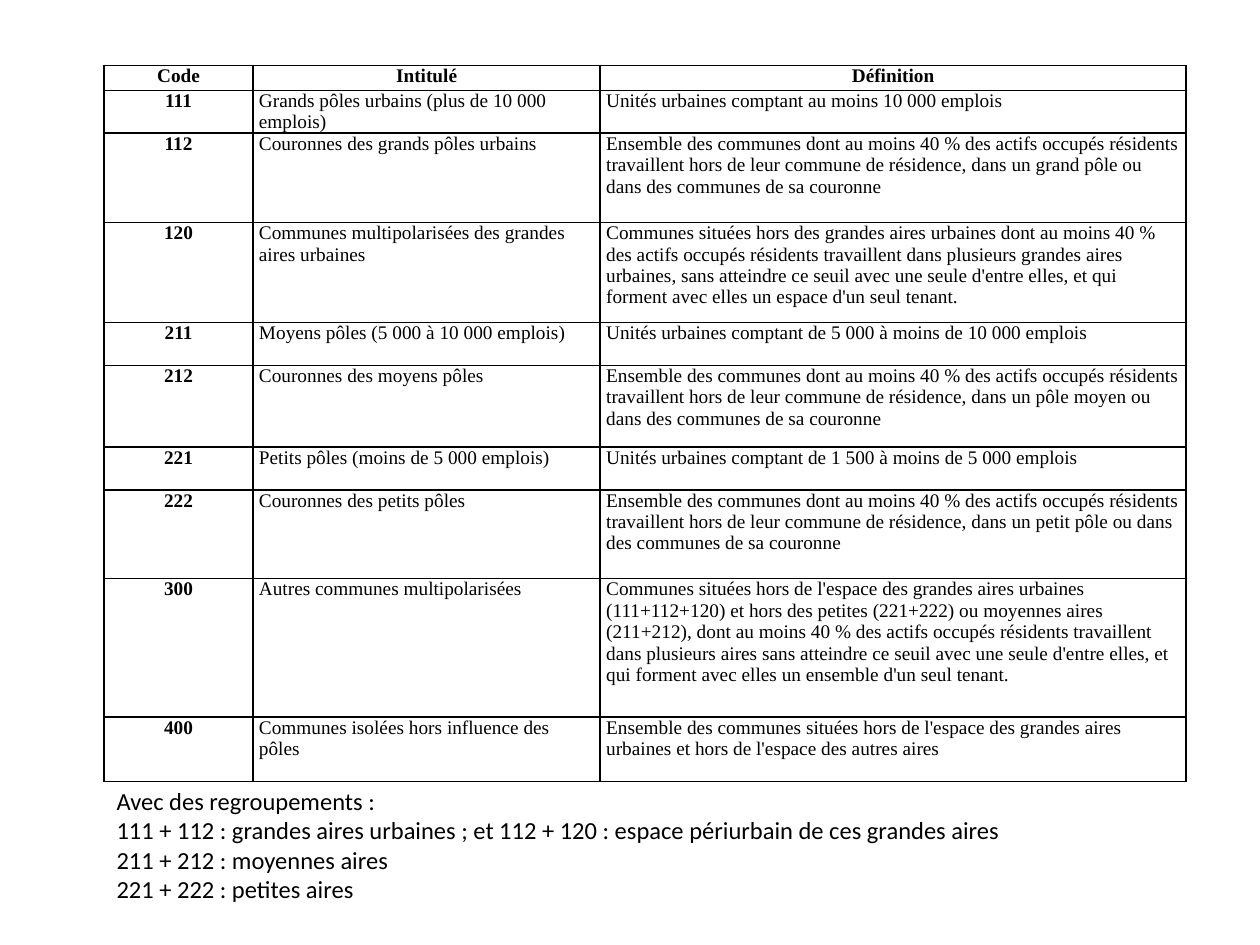
import pptx
import pptx.util
import pptx.dml.color
import pptx.enum.text
import pptx.oxml
import lxml.etree

Cm = pptx.util.Cm
ALIGN = pptx.enum.text.PP_ALIGN

COLORS = {"text": "000000", "border": "000000"}
FONTS = {"table": "Times New Roman", "notes": "Calibri"}

HEADERS = ("Code", "Intitulé", "Définition")
COLUMN_WIDTHS = (3.0, 7.0, 11.81)
HEADER_HEIGHT = 0.5
CATEGORIES = [
    (0.86, "111", "Grands pôles urbains (plus de 10 000 emplois)",
     "Unités urbaines comptant au moins 10 000 emplois"),
    (1.8, "112", "Couronnes des grands pôles urbains",
     "Ensemble des communes dont au moins 40 % des actifs occupés résidents travaillent "
     "hors de leur commune de résidence, dans un grand pôle ou dans des communes de sa couronne"),
    (2.02, "120", "Communes multipolarisées des grandes aires urbaines",
     "Communes situées hors des grandes aires urbaines dont au moins 40 % des actifs occupés "
     "résidents travaillent dans plusieurs grandes aires urbaines, sans atteindre ce seuil avec "
     "une seule d'entre elles, et qui forment avec elles un espace d'un seul tenant."),
    (0.86, "211", "Moyens pôles (5 000 à 10 000 emplois)",
     "Unités urbaines comptant de 5 000 à moins de 10 000 emplois"),
    (1.65, "212", "Couronnes des moyens pôles",
     "Ensemble des communes dont au moins 40 % des actifs occupés résidents travaillent "
     "hors de leur commune de résidence, dans un pôle moyen ou dans des communes de sa couronne"),
    (0.86, "221", "Petits pôles (moins de 5 000 emplois)",
     "Unités urbaines comptant de 1 500 à moins de 5 000 emplois"),
    (1.79, "222", "Couronnes des petits pôles",
     "Ensemble des communes dont au moins 40 % des actifs occupés résidents travaillent "
     "hors de leur commune de résidence, dans un petit pôle ou dans des communes de sa couronne"),
    (2.79, "300", "Autres communes multipolarisées",
     "Communes situées hors de l'espace des grandes aires urbaines (111+112+120) et hors des "
     "petites (221+222) ou moyennes aires (211+212), dont au moins 40 % des actifs occupés "
     "résidents travaillent dans plusieurs aires sans atteindre ce seuil avec une seule d'entre "
     "elles, et qui forment avec elles un ensemble d'un seul tenant."),
    (1.3, "400", "Communes isolées hors influence des pôles",
     "Ensemble des communes situées hors de l'espace des grandes aires urbaines "
     "et hors de l'espace des autres aires"),
]
GROUPINGS = [
    "Avec des regroupements :",
    "111 + 112 : grandes aires urbaines ; et 112 + 120 : espace périurbain de ces grandes aires",
    "211 + 212 : moyennes aires",
    "221 + 222 : petites aires",
]
LEFT, TABLE_TOP, NOTES_TOP, NOTES_HEIGHT = 2.1, 1.32, 15.72, 2.64
WIDTH = sum(COLUMN_WIDTHS)


def write_text(frame, lines, font, size, bold=False, align=ALIGN.LEFT):
    frame.word_wrap = True
    for index, line in enumerate(lines):
        para = frame.add_paragraph() if index else frame.paragraphs[0]
        para.alignment = align
        span = para.add_run()
        span.text = line
        span.font.name = font
        span.font.size = pptx.util.Pt(size)
        span.font.bold = bold
        span.font.color.rgb = pptx.dml.color.RGBColor.from_string(COLORS["text"])


def add_borders(cell, width=1):
    properties = cell._tc.get_or_add_tcPr()
    for position, side in enumerate(("lnL", "lnR", "lnT", "lnB")):
        line = lxml.etree.Element(pptx.oxml.ns.qn("a:" + side), w=str(pptx.util.Pt(width)))
        fill = lxml.etree.SubElement(line, pptx.oxml.ns.qn("a:solidFill"))
        lxml.etree.SubElement(fill, pptx.oxml.ns.qn("a:srgbClr"), val=COLORS["border"])
        properties.insert(position, line)


def add_category_table(page):
    rows = [(HEADER_HEIGHT, *HEADERS)] + CATEGORIES
    height = sum(row[0] for row in rows)
    table = page.shapes.add_table(len(rows), len(HEADERS), Cm(LEFT), Cm(TABLE_TOP),
                                  Cm(WIDTH), Cm(height)).table
    table.horz_banding = False
    for column, width in zip(table.columns, COLUMN_WIDTHS):
        column.width = Cm(width)
    for row_index, (row_height, *texts) in enumerate(rows):
        table.rows[row_index].height = Cm(row_height)
        for column_index, text in enumerate(texts):
            cell = table.cell(row_index, column_index)
            cell.fill.background()
            cell.margin_left = cell.margin_right = Cm(0.12)
            cell.margin_top = cell.margin_bottom = 0
            heading = row_index == 0 or column_index == 0
            write_text(cell.text_frame, [text], FONTS["table"], 11, bold=heading,
                       align=ALIGN.CENTER if heading else ALIGN.LEFT)
            add_borders(cell)


def add_groupings(page):
    box = page.shapes.add_textbox(Cm(LEFT), Cm(NOTES_TOP), Cm(WIDTH), Cm(NOTES_HEIGHT))
    write_text(box.text_frame, GROUPINGS, FONTS["notes"], 14)
    box.text_frame.auto_size = pptx.enum.text.MSO_AUTO_SIZE.SHAPE_TO_FIT_TEXT


def main():
    deck = pptx.Presentation()
    deck.slide_width, deck.slide_height = Cm(25.4), Cm(19.05)
    page = deck.slides.add_slide(deck.slide_layouts[6])
    add_category_table(page)
    add_groupings(page)
    deck.save("out.pptx")


if __name__ == "__main__":
    main()
